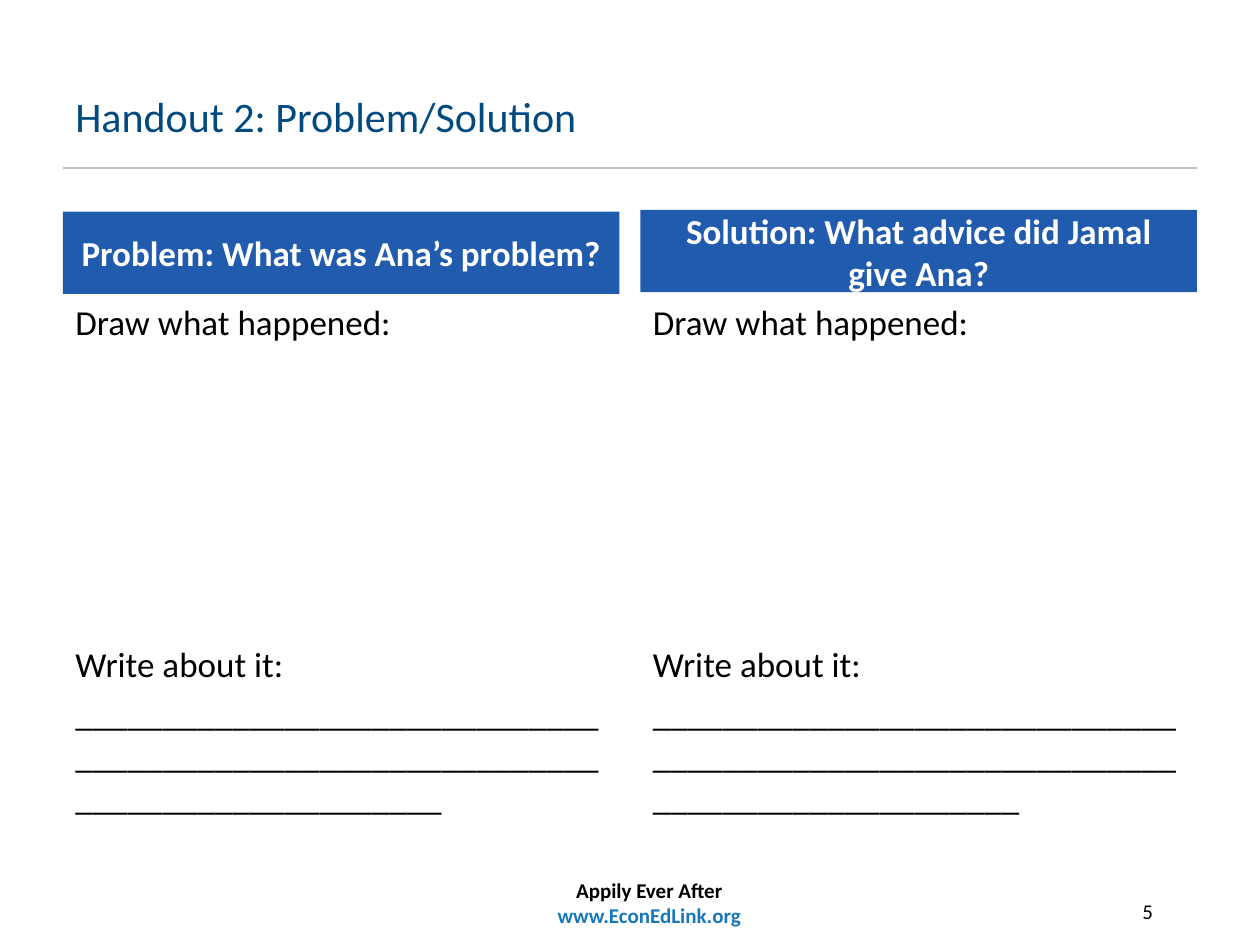
import pptx
import pptx.util
import pptx.dml.color
import pptx.enum.shapes
import pptx.enum.text
import pptx.oxml.ns
import lxml.etree

Pt = pptx.util.Pt
ALIGN = pptx.enum.text.PP_ALIGN
ANCHOR = pptx.enum.text.MSO_ANCHOR

MARGIN = 36
CONTENT_WIDTH = 648
COLUMN_WIDTH = 318
BODY_TOP = 168
WRITING_LINES = "_" * 81


def color(value):
    return pptx.dml.color.RGBColor.from_string(value)


def write(paragraph, text, size, ink="000000", bold=False, align=ALIGN.LEFT, before=0):
    paragraph.alignment = align
    paragraph.space_before = Pt(before)
    run = paragraph.add_run()
    run.text = text
    run.font.name = "Calibri"
    run.font.size = Pt(size)
    run.font.bold = bold
    run.font.color.rgb = color(ink)


def add_text(slide, left, top, width, height):
    box = slide.shapes.add_textbox(Pt(left), Pt(top), Pt(width), Pt(height))
    box.text_frame.word_wrap = True
    return box.text_frame


def add_rule(slide, left, top, width):
    rule = slide.shapes.add_connector(
        pptx.enum.shapes.MSO_CONNECTOR.STRAIGHT,
        Pt(left), Pt(top), Pt(left + width), Pt(top))
    rule.line.color.rgb = color("C0C0C0")
    rule.line.width = Pt(1.25)
    properties = rule._element.spPr
    lxml.etree.SubElement(properties, pptx.oxml.ns.qn("a:effectLst"))


def add_heading(slide, left, top, question):
    heading = slide.shapes.add_shape(
        pptx.enum.shapes.MSO_SHAPE.RECTANGLE,
        Pt(left), Pt(top), Pt(COLUMN_WIDTH), Pt(47))
    heading.shadow.inherit = False
    heading.fill.solid()
    heading.fill.fore_color.rgb = color("215BAE")
    heading.line.fill.background()
    frame = heading.text_frame
    frame.word_wrap = True
    frame.vertical_anchor = ANCHOR.MIDDLE
    write(frame.paragraphs[0], question, 20, "FFFFFF", True, ALIGN.CENTER)


def add_worksheet(slide, left):
    frame = add_text(slide, left, BODY_TOP, COLUMN_WIDTH, 311)
    write(frame.paragraphs[0], "Draw what happened:", 20)
    write(frame.add_paragraph(), "Write about it:", 20, before=171.6)
    write(frame.add_paragraph(), WRITING_LINES, 20, before=4)


def main():
    deck = pptx.Presentation()
    deck.slide_width, deck.slide_height = Pt(720), Pt(540)
    slide = deck.slides.add_slide(deck.slide_layouts[6])

    title = add_text(slide, MARGIN, 48, CONTENT_WIDTH, 48)
    write(title.paragraphs[0], "Handout 2: Problem/Solution", 24, "004A80")
    add_rule(slide, MARGIN, 96, CONTENT_WIDTH)

    solution_left = MARGIN + CONTENT_WIDTH - COLUMN_WIDTH
    columns = [
        (MARGIN, 121, "Problem: What was Ana’s problem?"),
        (solution_left, 120, "Solution: What advice did Jamal give Ana?"),
    ]
    for left, top, question in columns:
        add_heading(slide, left, top, question)
        add_worksheet(slide, left)

    page_number = add_text(slide, 516, 510, 150, 36)
    write(page_number.paragraphs[0], "5", 12, align=ALIGN.RIGHT)

    footer = add_text(slide, 60, 498, 622, 36)
    write(footer.paragraphs[0], "Appily Ever After", 12, bold=True, align=ALIGN.CENTER)
    write(footer.add_paragraph(), "www.EconEdLink.org", 12, "1578BC", True, ALIGN.CENTER)

    deck.save("out.pptx")


if __name__ == "__main__":
    main()
